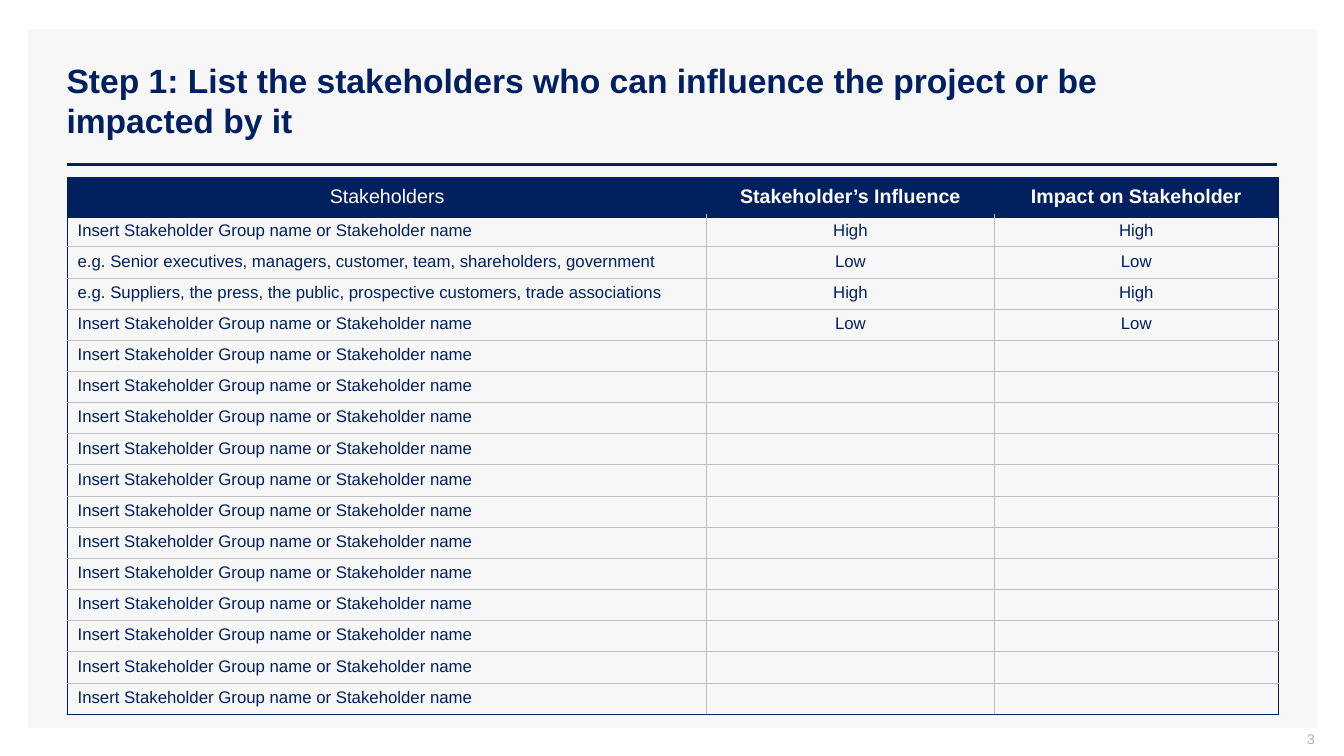
import lxml.etree
import pptx
import pptx.dml.color
import pptx.enum.shapes
import pptx.enum.text
import pptx.oxml.ns
import pptx.util

PX = 9144
ALIGN = pptx.enum.text.PP_ALIGN
ANCHOR = pptx.enum.text.MSO_ANCHOR
THEME = {
    "navy": "002060", "panel": "F7F7F7", "grid": "BFBFBF", "pale": "ADAFBB", "white": "FFFFFF",
    "font": "Arial", "title": 24, "head": 14, "body": 12, "page": 10,
}
NAME = "Insert Stakeholder Group name or Stakeholder name"
HEADS = ["Stakeholders", "Stakeholder’s Influence", "Impact on Stakeholder"]
ROWS = [
    [NAME, "High", "High"],
    ["e.g. Senior executives, managers, customer, team, shareholders, government", "Low", "Low"],
    ["e.g. Suppliers, the press, the public, prospective customers, trade associations", "High", "High"],
    [NAME, "Low", "Low"],
] + [[NAME, "", ""]] * 12


def px(*sizes):
    """Turn px lengths into EMU."""
    return [pptx.util.Emu(round(size * PX)) for size in sizes]


def color(key):
    """Look up a theme colour."""
    return pptx.dml.color.RGBColor.from_string(THEME[key])


def apply(item, values):
    """Set every attribute named in a dict."""
    for key, value in values.items():
        setattr(item, key, value)


def write(frame, text, size, ink, bold=False, align=ALIGN.LEFT):
    """Fill a text frame with one styled paragraph."""
    para = frame.paragraphs[0]
    para.alignment = align
    if text:
        run = para.add_run()
        run.text = text
        apply(run.font, {"name": THEME["font"], "size": pptx.util.Pt(THEME[size]), "bold": bold})
        run.font.color.rgb = color(ink)
    else:
        tag = pptx.oxml.ns.qn("a:endParaRPr")
        lxml.etree.SubElement(para._p, tag, sz=str(THEME[size] * 100))


def border(cell, sides):
    """Draw the cell edges given as side: (colour, points)."""
    props = cell._tc.get_or_add_tcPr()
    for side in "LRTB":
        ink, width = sides[side]
        line = lxml.etree.SubElement(props, pptx.oxml.ns.qn("a:ln" + side), w=str(pptx.util.Pt(width)))
        fill = lxml.etree.SubElement(line, pptx.oxml.ns.qn("a:solidFill"))
        lxml.etree.SubElement(fill, pptx.oxml.ns.qn("a:srgbClr"), val=THEME[ink])


def edges(row, col, last, end):
    """Choose the edges of a cell from its place in the grid."""
    outer, inner = ("navy", 0.75), ("grid", 0.75)
    if row == 0:
        inner = ("navy", 1)
    sides = {"L": inner if col else outer, "R": outer if col == end else inner}
    if row == 0:
        return {**sides, "T": outer, "B": ("navy", 3)}
    top = ("navy", 1) if row == 1 else inner
    return {**sides, "T": top, "B": outer if row == last else inner}


def panel(slide, left, top, width, height):
    """Lay the grey panel and its rule behind the title."""
    shape = slide.shapes.add_shape(
        pptx.enum.shapes.MSO_SHAPE.RECTANGLE, *px(left, top, width, height))
    shape.shadow.inherit = False
    shape.fill.solid()
    shape.fill.fore_color.rgb = color("panel")
    shape.line.fill.background()
    slide.shapes._spTree.insert(2, shape._element)
    rule = slide.shapes.add_connector(
        pptx.enum.shapes.MSO_CONNECTOR.STRAIGHT,
        *px(left + 38, top + 134, left + width - 39, top + 134))
    rule.line.color.rgb = color("navy")
    rule.line.width = pptx.util.Pt(2)
    lxml.etree.SubElement(rule._element.spPr, pptx.oxml.ns.qn("a:effectLst"))


def title(slide, text, *box):
    """Place and style the slide title."""
    shape = slide.shapes.title
    apply(shape, dict(zip(("left", "top", "width", "height"), px(*box))))
    apply(shape.text_frame, {
        "vertical_anchor": ANCHOR.MIDDLE, "word_wrap": True,
        "auto_size": pptx.enum.text.MSO_AUTO_SIZE.NONE})
    write(shape.text_frame, text, "title", "navy", True)


def grid(slide, left, top, width, height):
    """Build the stakeholder table with even body rows."""
    rows = [HEADS] + ROWS
    last, end = len(rows) - 1, len(HEADS) - 1
    table = slide.shapes.add_table(
        len(rows), len(HEADS), *px(left, top, width, height)).table
    apply(table, {"first_row": False, "horz_banding": False})
    for col, size in zip(table.columns, px(634, 285, width - 919)):
        col.width = size
    head = 38
    for row, texts in enumerate(rows):
        table.rows[row].height = px((height - head) / last if row else head)[0]
        for col, text in enumerate(texts):
            cell = table.cell(row, col)
            border(cell, edges(row, col, last, end))
            if row:
                cell.fill.background()
                write(cell.text_frame, text, "body", "navy",
                      align=ALIGN.CENTER if col else ALIGN.LEFT)
            else:
                cell.fill.solid()
                cell.fill.fore_color.rgb = color("navy")
                cell.vertical_anchor = ANCHOR.MIDDLE
                write(cell.text_frame, text, "head", "white", col > 0, ALIGN.CENTER)


def page(slide, text, *box):
    """Place the page number."""
    frame = slide.shapes.add_textbox(*px(*box)).text_frame
    apply(frame, {
        "word_wrap": True, "vertical_anchor": ANCHOR.MIDDLE,
        "margin_top": 0, "margin_right": 0, "margin_bottom": px(5)[0]})
    write(frame, text, "page", "pale", align=ALIGN.RIGHT)


def main():
    """Build and save the slide."""
    deck = pptx.Presentation()
    apply(deck, dict(zip(("slide_width", "slide_height"), px(1333, 750))))
    slide = deck.slides.add_slide(deck.slide_layouts[5])
    panel(slide, 28, 29, 1278, 693)
    title(slide, "Step 1: List the stakeholders who can influence the project or be impacted by it",
          56, 40, 1100, 119)
    page(slide, "3", 1004, 725, 300, 21)
    grid(slide, 67, 176, 1201, 533)
    deck.save("out.pptx")


if __name__ == "__main__":
    main()
